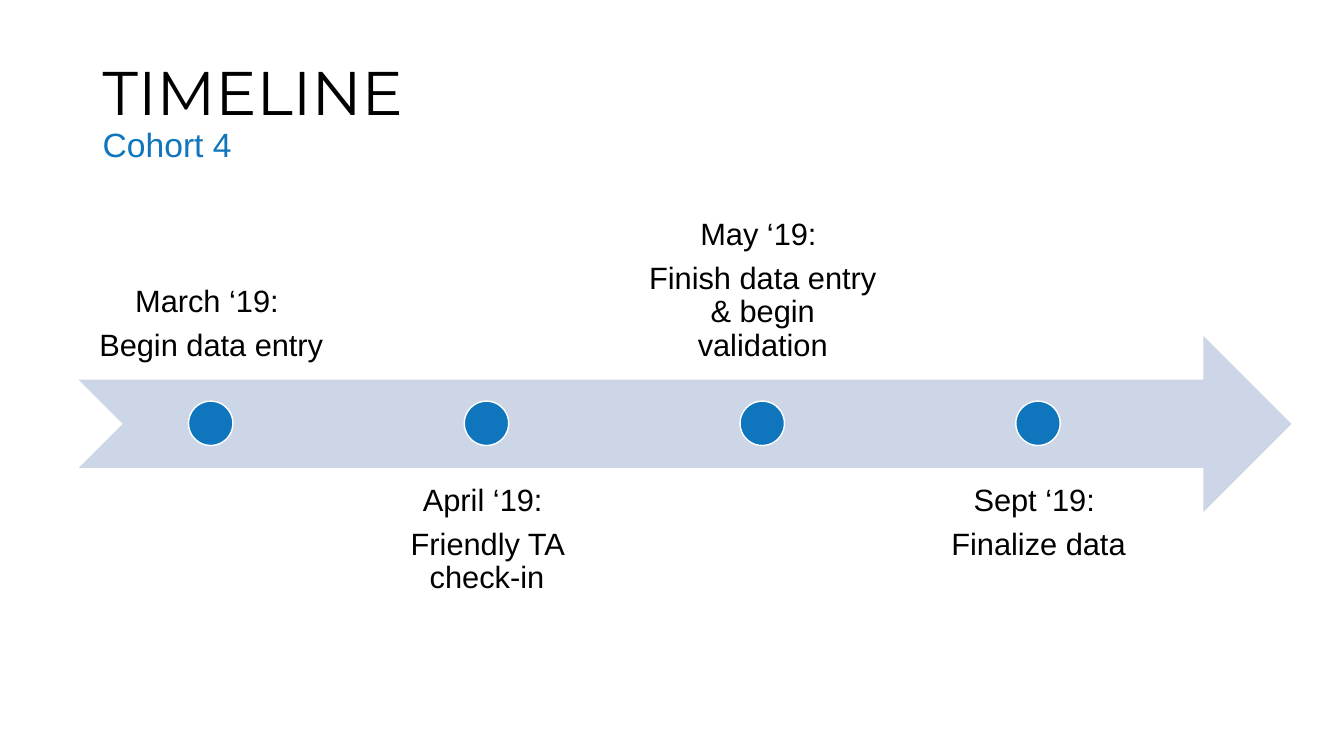
from pptx import Presentation
from pptx.dml.color import RGBColor
from pptx.enum.shapes import MSO_SHAPE as Shape
from pptx.enum.text import MSO_ANCHOR as Anchor, PP_ALIGN as Align
from pptx.util import Inches, Pt

COLORS = {"text": "000000", "accent": "0F75BC", "arrow": "CCD6E7", "outline": "FFFFFF"}
MILESTONES = [
    ("March ‘19: ", "Begin data entry"),
    ("April ‘19: ", "Friendly TA check-in"),
    ("May ‘19: ", "Finish data entry & begin validation"),
    ("Sept ‘19: ", "Finalize data"),
]
STEP = 2.735
DOT_SIZE = 0.44


def add_run(paragraph, text, size, font, color):
    run = paragraph.add_run()
    run.text = text
    for attribute, value in {"size": Pt(size), "name": font}.items():
        setattr(run.font, attribute, value)
    run.font.color.rgb = RGBColor.from_string(COLORS[color])


def add_filled(kind, left, top, width, height, color):
    shape = slide.shapes.add_shape(
        kind, Inches(left), Inches(top), Inches(width), Inches(height))
    shape.shadow.inherit = False
    shape.fill.solid()
    shape.fill.fore_color.rgb = RGBColor.from_string(COLORS[color])
    shape.line.fill.background()
    return shape


deck = Presentation()
deck.slide_width = Inches(13.33)
deck.slide_height = Inches(7.5)
slide = deck.slides.add_slide(deck.slide_layouts[6])

heading = slide.shapes.add_textbox(
    Inches(0.92), Inches(0.4), Inches(11.5), Inches(1.45)).text_frame
heading.word_wrap = True
heading.vertical_anchor = Anchor.MIDDLE
heading_line = heading.paragraphs[0]
heading_line.line_spacing = 0.9
add_run(heading_line, "TIMELINE", 44, "Montserrat", "text")
heading_line.add_line_break()
add_run(heading_line, "Cohort 4", 24, "Arial", "accent")

add_filled(Shape.NOTCHED_RIGHT_ARROW, 0.78, 3.33, 12.03, 1.75, "arrow")

for index, milestone in enumerate(MILESTONES):
    above = index % 2 == 0
    label = slide.shapes.add_textbox(
        Inches(0.79 + index * STEP), Inches(2.02 if above else 4.64),
        Inches(2.61), Inches(1.75)).text_frame
    label_format = {
        "word_wrap": True,
        "vertical_anchor": Anchor.BOTTOM if above else Anchor.TOP,
        **{f"margin_{side}": Inches(0.17) for side in ("left", "top", "right", "bottom")},
    }
    for attribute, value in label_format.items():
        setattr(label, attribute, value)
    for row, text in enumerate(milestone):
        line = label.add_paragraph() if row else label.paragraphs[0]
        line_format = {"alignment": Align.CENTER, "line_spacing": 0.9, "space_after": Pt(7.7)}
        for attribute, value in line_format.items():
            setattr(line, attribute, value)
        add_run(line, text, 22, "Arial", "text")

    dot = add_filled(Shape.OVAL, 1.87 + index * STEP, 3.98, DOT_SIZE, DOT_SIZE, "accent")
    dot.line.color.rgb = RGBColor.from_string(COLORS["outline"])
    dot.line.width = Pt(1)

deck.save("out.pptx")
